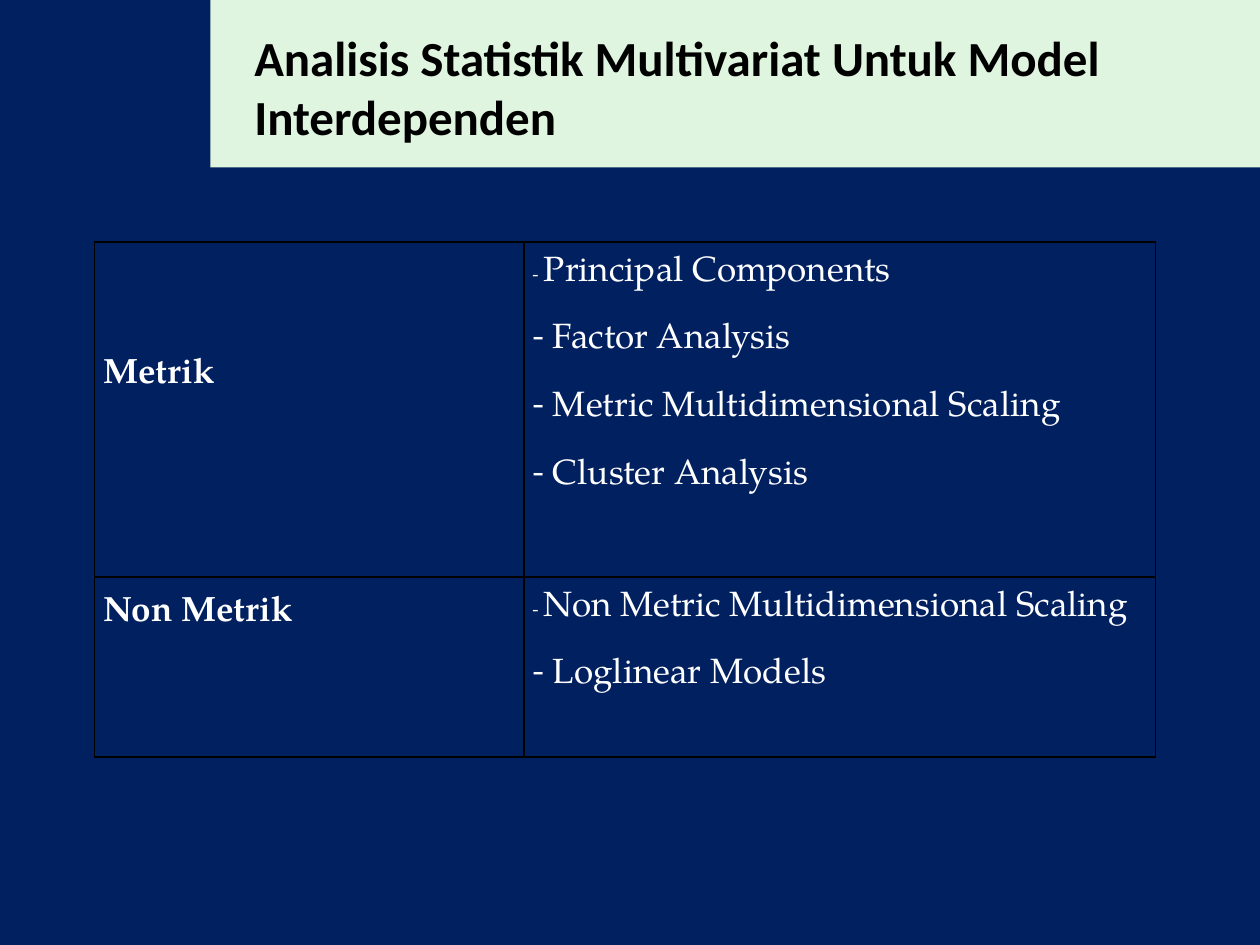
import pptx
import pptx.util
import pptx.dml.color
import pptx.enum.shapes
import pptx.oxml
import pptx.oxml.ns

Inches = pptx.util.Inches
Pt = pptx.util.Pt
RGBColor = pptx.dml.color.RGBColor

NAVY = RGBColor(0x00, 0x20, 0x60)
MINT = RGBColor(0xDF, 0xF5, 0xDF)
BLACK = RGBColor(0x00, 0x00, 0x00)
WHITE = RGBColor(0xFF, 0xFF, 0xFF)

# Each row: height, heading, top margin of the heading, methods
ROWS = [
    (2.66, "Metrik", 0.92,
     ["Principal Components", "Factor Analysis",
      "Metric Multidimensional Scaling", "Cluster Analysis"]),
    (1.43, "Non Metrik", 0.15,
     ["Non Metric Multidimensional Scaling", "Loglinear Models"]),
]


def add_run(paragraph, text, font_name, size, color, bold=False):
    run = paragraph.add_run()
    run.text = text
    run.font.name = font_name
    run.font.size = Pt(size)
    run.font.color.rgb = color
    run.font.bold = bold


def style_cell(cell, top_margin):
    cell.margin_left = Inches(0.07)
    cell.margin_right = cell.margin_bottom = 0
    cell.margin_top = Inches(top_margin)
    properties = cell._tc.get_or_add_tcPr()
    for side in ("lnL", "lnR", "lnT", "lnB"):
        properties.append(pptx.oxml.parse_xml(
            f'<a:{side} {pptx.oxml.ns.nsdecls("a")} w="12700"><a:solidFill>'
            f'<a:srgbClr val="{BLACK}"/></a:solidFill></a:{side}>'))
    cell.fill.background()


presentation = pptx.Presentation()
presentation.slide_width = Inches(10)
presentation.slide_height = Inches(7.5)
slide = presentation.slides.add_slide(presentation.slide_layouts[6])
slide.background.fill.solid()
slide.background.fill.fore_color.rgb = NAVY

# Title band
band = slide.shapes.add_shape(
    pptx.enum.shapes.MSO_SHAPE.RECTANGLE,
    Inches(1.67), 0, Inches(8.33), Inches(1.33))
band.shadow.inherit = False
band.fill.solid()
band.fill.fore_color.rgb = MINT
band.line.fill.background()

# Table of methods
table = slide.shapes.add_table(
    len(ROWS), 2, Inches(0.75), Inches(1.92), Inches(8.42), Inches(4.09)).table
table.first_row = False
table.horz_banding = False
table.columns[0].width = Inches(3.41)
table.columns[1].width = Inches(5.01)

for row_index, (height, heading, heading_margin, methods) in enumerate(ROWS):
    table.rows[row_index].height = Inches(height)
    heading_cell = table.cell(row_index, 0)
    style_cell(heading_cell, heading_margin)
    add_run(heading_cell.text_frame.paragraphs[0], heading,
            "TeX Gyre Pagella", 20, WHITE, bold=True)

    method_cell = table.cell(row_index, 1)
    style_cell(method_cell, 0.07)
    for method_index, method in enumerate(methods):
        if method_index == 0:
            paragraph = method_cell.text_frame.paragraphs[0]
        else:
            paragraph = method_cell.text_frame.add_paragraph()
            paragraph.space_before = Pt(5.3)
        paragraph.line_spacing = 1.15
        dash_size = 11 if method_index == 0 else 20
        add_run(paragraph, "- ", "Noto Sans CJK TC", dash_size, WHITE)
        add_run(paragraph, method, "TeX Gyre Pagella", 20, WHITE)

# Title
title = slide.shapes.add_textbox(
    Inches(1.92), Inches(0.17), Inches(8.83), Inches(1.35))
title.text_frame.word_wrap = True
add_run(title.text_frame.paragraphs[0],
        "Analisis Statistik Multivariat Untuk Model Interdependen",
        "Calibri", 28, BLACK, bold=True)

presentation.save("out.pptx")
